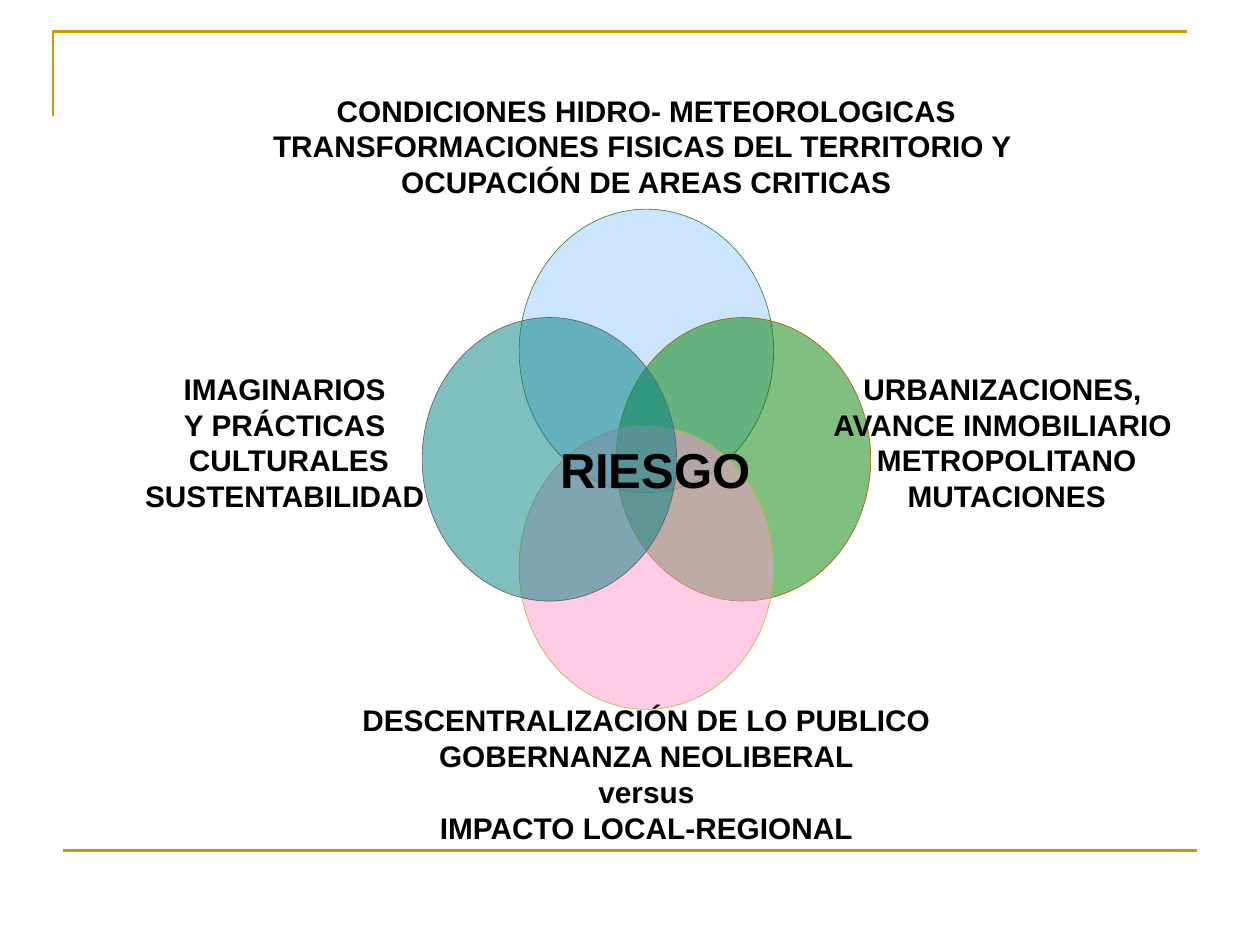
from dataclasses import dataclass

import pptx
import pptx.dml.color
import pptx.enum.shapes
import pptx.enum.text
import pptx.oxml.ns
import pptx.util

Inches = pptx.util.Inches
Pt = pptx.util.Pt
RGBColor = pptx.dml.color.RGBColor
Kind = pptx.enum.shapes.MSO_SHAPE
qn = pptx.oxml.ns.qn

BLACK = RGBColor(0, 0, 0)
GOLD = RGBColor(0xCC, 0x99, 0x00)
SKY = RGBColor(0x99, 0xCC, 0xFF)
GREEN = RGBColor(0x00, 0x80, 0x00)
PINK = RGBColor(0xFF, 0x99, 0xCC)
TEAL = RGBColor(0x00, 0x80, 0x80)
MOSS = RGBColor(0x3B, 0x81, 0x2F)
BROWN = RGBColor(0x99, 0x66, 0x00)
LIME = RGBColor(0xAF, 0xBF, 0x39)
GREY = RGBColor(0x5F, 0x5F, 0x5F)

# Corner of an oval placed at the hub, its size, and the steps outward
HUB_X, HUB_Y = 4.12, 2.52
OVAL_W, OVAL_H = 2.02, 2.25
STEP_X, STEP_Y = 0.77, 0.86
TEXT_W, TEXT_H = 1.78, 0.56


@dataclass
class Petal:
    """One oval of the diagram: direction from the hub, colours and label."""
    dx: int
    dy: int
    fill: RGBColor
    line: RGBColor
    left: float
    top: float
    text: str


PETALS = [
    Petal(0, -1, SKY, MOSS, 4.24, 0.88,
          "CONDICIONES HIDRO- METEOROLOGICAS\n"
          "TRANSFORMACIONES FISICAS DEL TERRITORIO Y \n"
          "OCUPACIÓN DE AREAS CRITICAS"),
    Petal(1, 0, GREEN, BROWN, 7.1, 3.23,
          "URBANIZACIONES, \nAVANCE INMOBILIARIO \nMETROPOLITANO\nMUTACIONES"),
    Petal(0, 1, PINK, LIME, 4.24, 5.86,
          "DESCENTRALIZACIÓN DE LO PUBLICO\nGOBERNANZA NEOLIBERAL\n"
          "versus\nIMPACTO LOCAL-REGIONAL"),
    Petal(-1, 0, TEAL, GREY, 1.37, 3.23,
          "IMAGINARIOS\nY PRÁCTICAS\n CULTURALES\nSUSTENTABILIDAD"),
]


def add_frame(slide) -> None:
    """Draw the gold corner at the top and the gold rule at the bottom."""
    pen = slide.shapes.build_freeform(Inches(0.42), Inches(0.92))
    pen.add_line_segments(
        [(Inches(0.42), Inches(0.25)), (Inches(9.42), Inches(0.25))], close=False)
    edge = pen.convert_to_shape()
    edge.shadow.inherit = False
    edge.fill.background()
    rule = slide.shapes.add_connector(
        pptx.enum.shapes.MSO_CONNECTOR.STRAIGHT,
        Inches(0.5), Inches(6.75), Inches(9.5), Inches(6.75))
    for item in (edge, rule):
        item.line.color.rgb = GOLD
        item.line.width = Pt(1.5)
    props = rule._element.spPr
    props.append(props.makeelement(qn("a:effectLst"), {}))


def add_oval(slide, petal: Petal) -> None:
    oval = slide.shapes.add_shape(
        Kind.OVAL,
        Inches(HUB_X + petal.dx * STEP_X), Inches(HUB_Y + petal.dy * STEP_Y),
        Inches(OVAL_W), Inches(OVAL_H))
    oval.shadow.inherit = False
    oval.fill.solid()
    oval.fill.fore_color.rgb = petal.fill
    tint = oval._element.spPr.find(".//" + qn("a:srgbClr"))
    tint.append(tint.makeelement(qn("a:alpha"), {"val": "50000"}))
    oval.line.color.rgb = petal.line
    oval.line.width = Pt(0.37)


def add_label(slide, text: str, left: float, top: float,
              width: float = TEXT_W, height: float = TEXT_H, size: int = 17) -> None:
    """Write centred lines that may run past the sides of their clear box."""
    box = slide.shapes.add_shape(
        Kind.RECTANGLE, Inches(left), Inches(top), Inches(width), Inches(height))
    box.shadow.inherit = False
    box.fill.background()
    box.line.fill.background()
    frame = box.text_frame
    frame.word_wrap = False
    frame.vertical_anchor = pptx.enum.text.MSO_ANCHOR.MIDDLE
    frame.margin_left = frame.margin_right = 0
    frame.margin_top = frame.margin_bottom = 0
    frame.text = text
    for para in frame.paragraphs:
        para.alignment = pptx.enum.text.PP_ALIGN.CENTER
        para.font.name = "Arial"
        para.font.size = Pt(size)
        para.font.bold = True
        para.font.color.rgb = BLACK


def main() -> None:
    deck = pptx.Presentation()
    deck.slide_width, deck.slide_height = Inches(10), Inches(7.5)
    slide = deck.slides.add_slide(deck.slide_layouts[6])
    add_frame(slide)
    for petal in PETALS:
        add_oval(slide, petal)
    for petal in PETALS:
        add_label(slide, petal.text, petal.left, petal.top)
    add_label(slide, "RIESGO", 3.98, 3.44, 2.44, 0.57, 28)
    deck.save("out.pptx")


if __name__ == "__main__":
    main()
